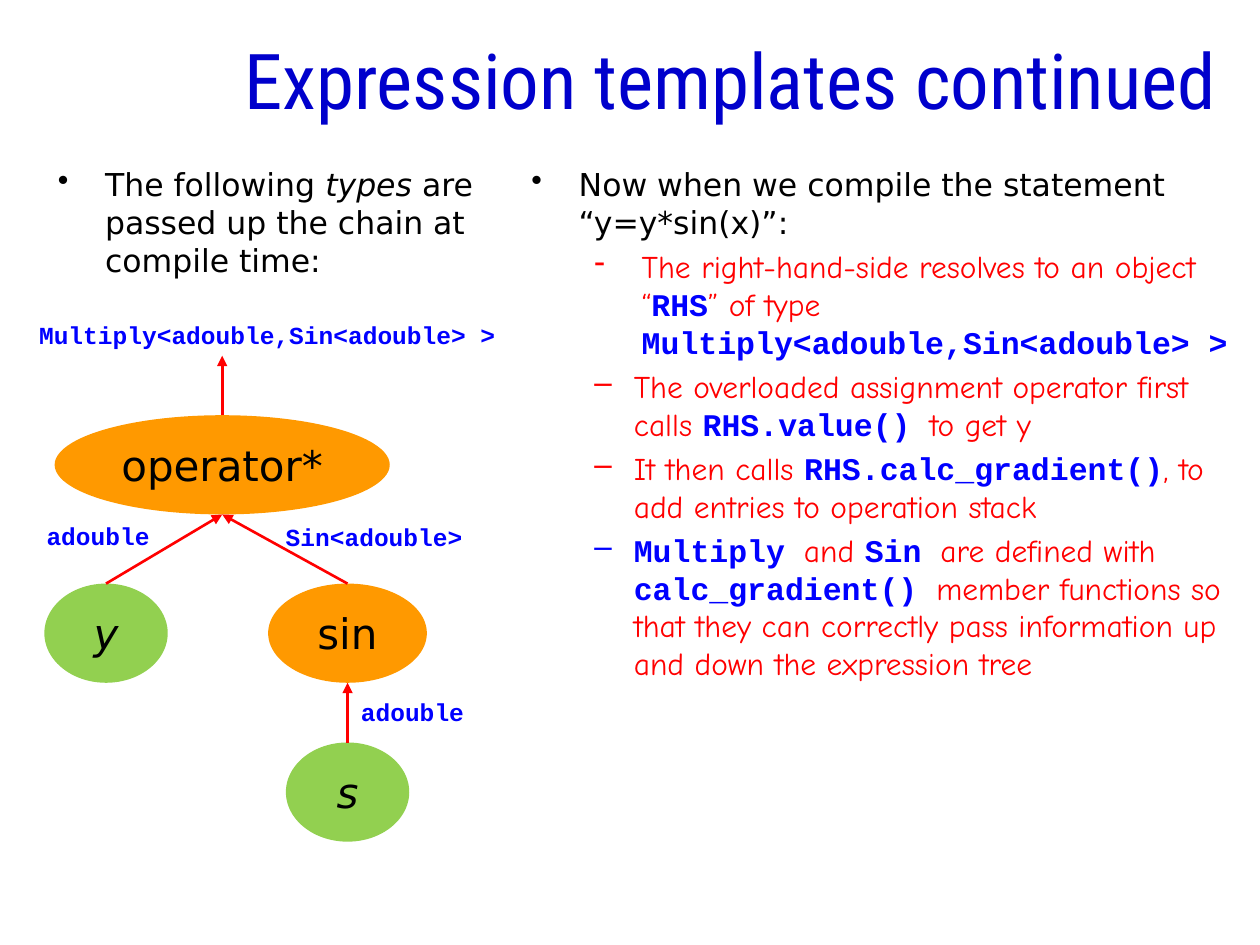
import lxml.etree
import pptx
import pptx.dml.color
import pptx.enum.shapes
import pptx.enum.text
import pptx.oxml.ns
import pptx.util

Pt = pptx.util.Pt
RGBColor = pptx.dml.color.RGBColor
Align = pptx.enum.text.PP_ALIGN
Anchor = pptx.enum.text.MSO_ANCHOR
qn = pptx.oxml.ns.qn

NAVY = RGBColor(0x00, 0x00, 0xCC)
BLUE = RGBColor(0x00, 0x00, 0xFF)
RED = RGBColor(0xFF, 0x00, 0x00)
BLACK = RGBColor(0x00, 0x00, 0x00)
ORANGE = RGBColor(0xFF, 0x99, 0x00)
GREEN = RGBColor(0x92, 0xD0, 0x50)

TITLE = {"name": "Roboto Condensed", "size": Pt(44), "color": NAVY}
BODY = {"name": "DejaVu Sans", "size": Pt(18), "color": BLACK}
BODY_ITALIC = {**BODY, "italic": True}
NOTE = {"name": "Comic Neue", "size": Pt(18), "color": RED}
CODE = {"name": "Courier New", "size": Pt(18), "color": BLUE, "bold": True}
LABEL = {**CODE, "size": Pt(14)}
NODE = {**BODY, "size": Pt(24)}
NODE_ITALIC = {**NODE, "italic": True}

TOP_BULLET = ("•", 27, 27, 0)
HYPHEN_BULLET = ("-", 63, 27, 1)
DASH_BULLET = ("–", 58.5, 22.5, 1)

LEFT_POINTS = [
    (TOP_BULLET, [("The following ", BODY), ("types", BODY_ITALIC),
                  (" are passed up the chain at compile time:", BODY)]),
]
RIGHT_POINTS = [
    (TOP_BULLET, [("Now when we compile the statement “y=y*sin(x)”:", BODY)]),
    (HYPHEN_BULLET, [("The right-hand-side resolves to an object “", NOTE), ("RHS", CODE),
                     ("” of type ", NOTE), ("Multiply<adouble,Sin<adouble> >", CODE)]),
    (DASH_BULLET, [("The overloaded assignment operator first calls ", NOTE),
                   ("RHS.value() ", CODE), ("to get y", NOTE)]),
    (DASH_BULLET, [("It then calls ", NOTE), ("RHS.calc_gradient()", CODE),
                   (", to add entries to operation stack", NOTE)]),
    (DASH_BULLET, [("Multiply ", CODE), ("and ", NOTE), ("Sin ", CODE),
                   ("are defined with ", NOTE), ("calc_gradient() ", CODE),
                   ("member functions so that they can correctly pass information "
                    "up and down the expression tree", NOTE)]),
]


def add_span(para, text, style):
    """Add a run of text with the given font values."""
    span = para.add_run()
    span.text = text
    for key, value in style.items():
        if key == "color":
            span.font.color.rgb = value
        else:
            setattr(span.font, key, value)


def add_text_box(page, box):
    """Add an empty wrapping text box and return its frame."""
    frame = page.shapes.add_textbox(*map(Pt, box)).text_frame
    frame.word_wrap = True
    return frame


def add_line_of_text(page, box, text, style, align, anchor=Anchor.TOP):
    """Add a text box holding one aligned paragraph."""
    frame = add_text_box(page, box)
    frame.vertical_anchor = anchor
    para = frame.paragraphs[0]
    para.alignment = align
    add_span(para, text, style)


def set_bullet(para, bullet):
    """Give a paragraph its bullet sign, hanging indent and level."""
    sign, margin, hang, para.level = bullet
    properties = para._p.get_or_add_pPr()
    properties.set("marL", str(Pt(margin)))
    properties.set("indent", str(-Pt(hang)))
    lxml.etree.SubElement(properties, qn("a:buChar")).set("char", sign)


def add_bullets(page, box, points):
    """Add a column of bulleted paragraphs."""
    frame = add_text_box(page, box)
    for index, (bullet, spans) in enumerate(points):
        para = frame.add_paragraph() if index else frame.paragraphs[0]
        set_bullet(para, bullet)
        if index:
            para.space_before = Pt(3.6)
        for text, style in spans:
            add_span(para, text, style)


def add_node(page, box, text, style, fill):
    """Add a filled ellipse with centred text."""
    node = page.shapes.add_shape(pptx.enum.shapes.MSO_SHAPE.OVAL, *map(Pt, box))
    node.shadow.inherit = False
    node.fill.solid()
    node.fill.fore_color.rgb = fill
    node.line.fill.background()
    frame = node.text_frame
    frame.vertical_anchor = Anchor.MIDDLE
    frame.paragraphs[0].alignment = Align.CENTER
    add_span(frame.paragraphs[0], text, style)


def add_arrow(page, start, end):
    """Add a red line with an arrowhead at its end."""
    arrow = page.shapes.add_connector(
        pptx.enum.shapes.MSO_CONNECTOR.STRAIGHT, *map(Pt, (*start, *end)))
    arrow.line.color.rgb = RED
    arrow.line.width = Pt(1.5)
    head = lxml.etree.SubElement(arrow.line._get_or_add_ln(), qn("a:tailEnd"))
    head.set("type", "triangle")
    lxml.etree.SubElement(arrow._element.spPr, qn("a:effectLst"))


def add_expression_tree(page, box):
    """Draw the tree of operations with the types passed between them."""
    left, top, _, _ = box
    height = 56.7
    nodes = {
        "operator*": (127, 58.3, 191.5, NODE, ORANGE),
        "sin": (198.6, 154.5, 90.7, NODE, ORANGE),
        "y": (60.6, 154.5, 70.5, NODE_ITALIC, GREEN),
        "s": (198.6, 245.3, 70.5, NODE_ITALIC, GREEN),
    }
    for text, (center, y, width, style, fill) in nodes.items():
        add_node(page, (left + center - width / 2, top + y, width, height), text, style, fill)
    for child, parent in [("sin", "operator*"), ("y", "operator*"), ("s", "sin")]:
        start, end = nodes[child], nodes[parent]
        add_arrow(page, (left + start[0], top + start[1]),
                  (left + end[0], top + end[1] + height))
    root = nodes["operator*"]
    add_arrow(page, (left + root[0], top + root[1]), (left + root[0], top + 24.3))
    labels = [
        ("Multiply<adouble,Sin<adouble> >", 9.4, 0.3, 287),
        ("Sin<adouble>", 150.5, 115.5, 126.7),
        ("adouble", 1.4, 115, 109.4),
        ("adouble", 167, 215.6, 137.5),
    ]
    for text, x, y, width in labels:
        add_line_of_text(page, (left + x, top + y, width, 34), text, LABEL, Align.CENTER)


def main():
    """Build the slide and save it."""
    deck = pptx.Presentation()
    deck.slide_width, deck.slide_height = Pt(720), Pt(540)
    page = deck.slides.add_slide(deck.slide_layouts[6])
    add_line_of_text(page, (18.7, 0, 684, 90), "Expression templates continued",
                     TITLE, Align.RIGHT, Anchor.MIDDLE)
    add_bullets(page, (26, 91, 294, 72), LEFT_POINTS)
    add_expression_tree(page, (0, 179, 305, 302))
    add_bullets(page, (296.6, 91, 423.4, 421), RIGHT_POINTS)
    deck.save("out.pptx")


if __name__ == "__main__":
    main()
